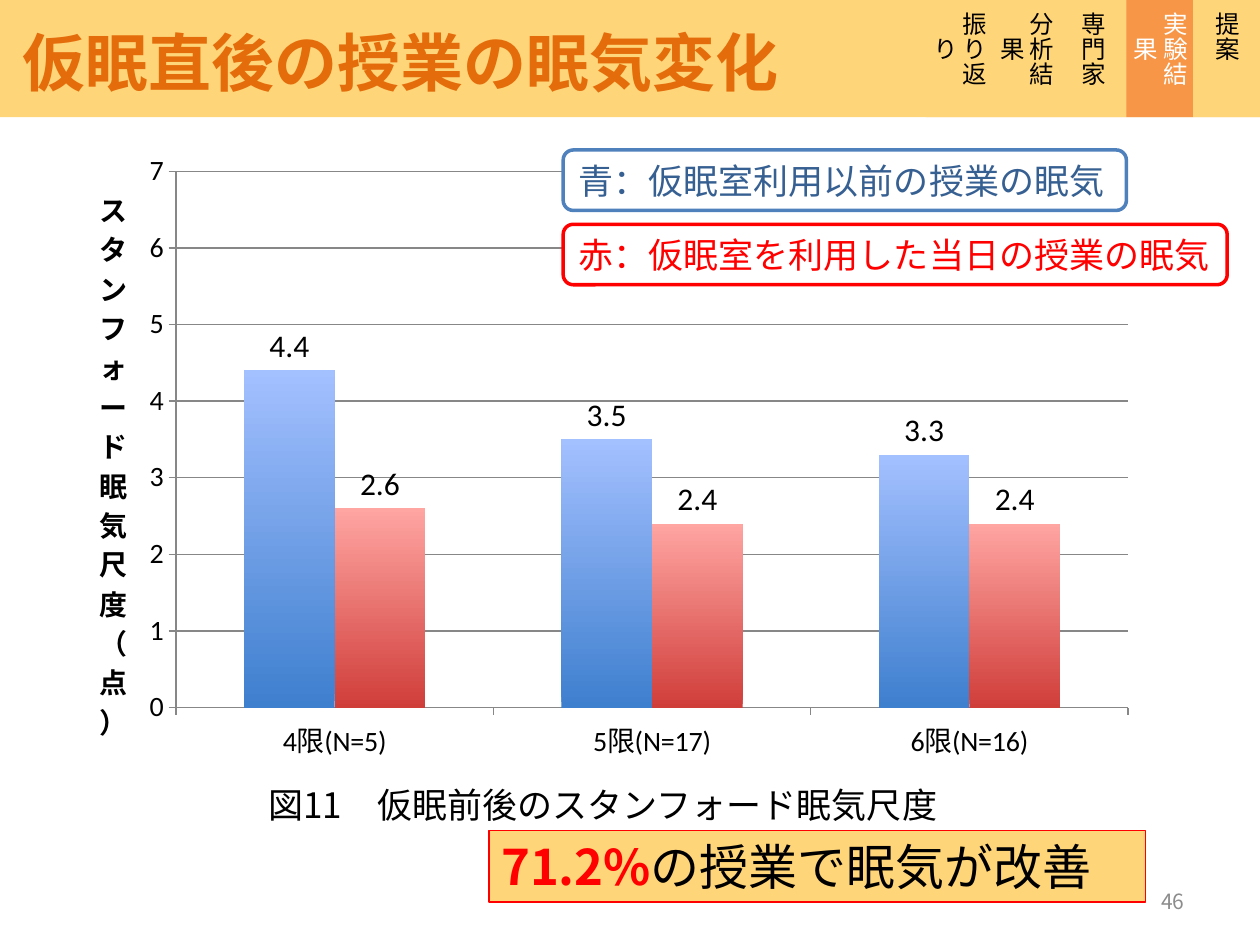
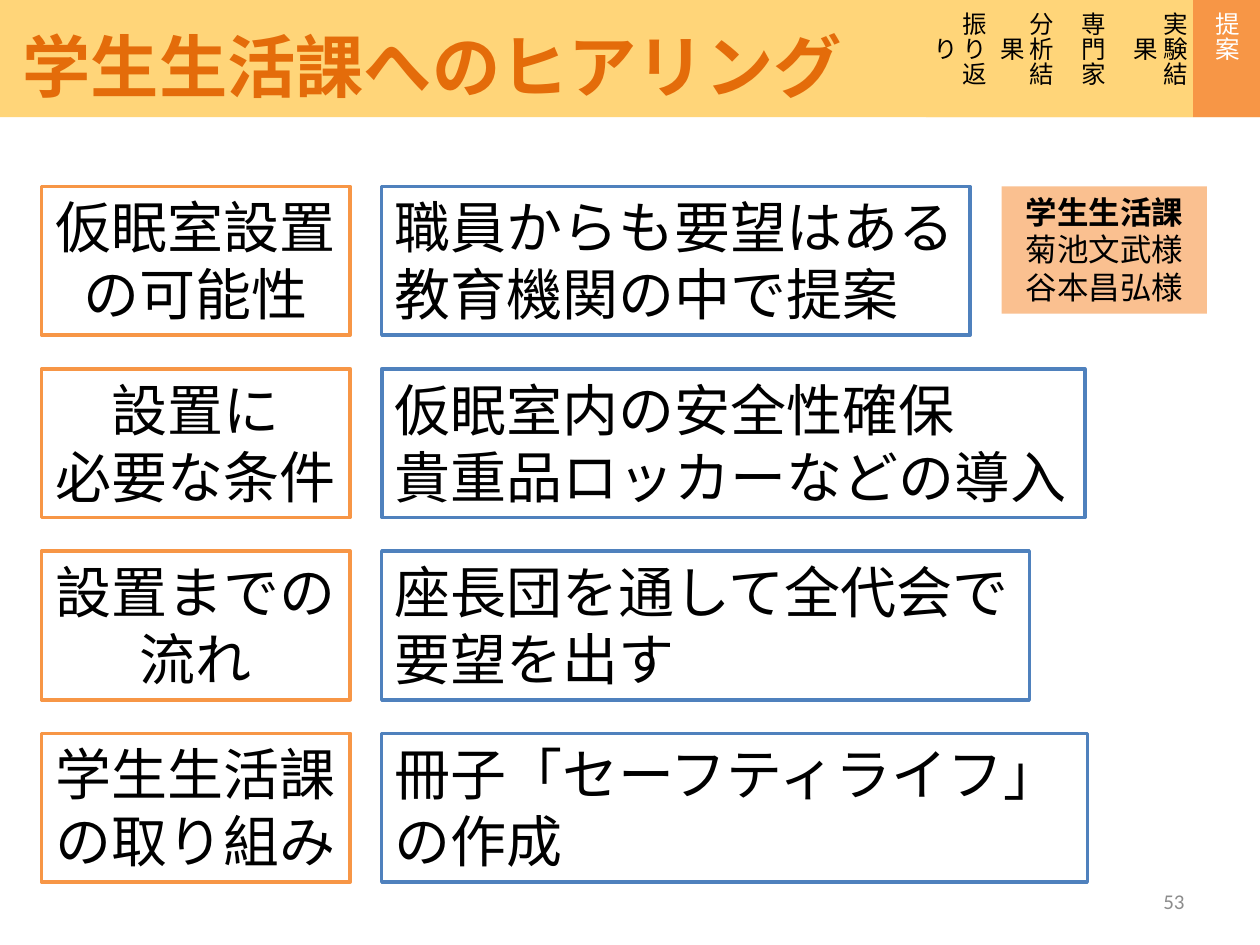
from dataclasses import dataclass
from typing import Sequence

from lxml import etree
from pptx import Presentation
from pptx.chart.data import CategoryChartData
from pptx.dml.color import RGBColor
from pptx.enum.chart import XL_CHART_TYPE, XL_LABEL_POSITION, XL_TICK_MARK
from pptx.enum.shapes import MSO_SHAPE
from pptx.enum.text import MSO_ANCHOR, MSO_AUTO_SIZE, PP_ALIGN
from pptx.oxml.ns import qn
from pptx.util import Inches, Pt

RECT, ROUNDED = MSO_SHAPE.RECTANGLE, MSO_SHAPE.ROUNDED_RECTANGLE
LEFT, CENTER, RIGHT = PP_ALIGN.LEFT, PP_ALIGN.CENTER, PP_ALIGN.RIGHT
TOP, MIDDLE = MSO_ANCHOR.TOP, MSO_ANCHOR.MIDDLE
NO_AUTOFIT = MSO_AUTO_SIZE.NONE
CLUSTERED = XL_CHART_TYPE.COLUMN_CLUSTERED
OUTSIDE_END = XL_LABEL_POSITION.OUTSIDE_END
TICK_OUT, TICK_NONE = XL_TICK_MARK.OUTSIDE, XL_TICK_MARK.NONE

JAPANESE, LATIN = "Noto Sans CJK JP", "Calibri"
BLACK = RGBColor(0x00, 0x00, 0x00)
WHITE = RGBColor(0xFF, 0xFF, 0xFF)
GREY = RGBColor(0x8C, 0x8C, 0x8C)
AXIS_GREY = RGBColor(0x87, 0x87, 0x87)
BAND = RGBColor(0xFF, 0xD5, 0x79)
TITLE_ORANGE = RGBColor(0xE4, 0x6C, 0x0A)
ORANGE = RGBColor(0xF7, 0x96, 0x46)
PEACH = RGBColor(0xFA, 0xC0, 0x90)
RED = RGBColor(0xFF, 0x00, 0x00)
BLUE = RGBColor(0x4F, 0x81, 0xBD)
DARK_BLUE = RGBColor(0x37, 0x60, 0x92)
BAR_BLUE = (RGBColor(0x3E, 0x7F, 0xCE), RGBColor(0xA3, 0xC0, 0xFF))
BAR_RED = (RGBColor(0xD0, 0x3E, 0x3A), RGBColor(0xFF, 0xA5, 0xA2))

BAND_HEIGHT = 0.93
TAB_WIDTH = 0.53
CHAPTERS = ("振り返り", "分析結果", "専門家", "実験結果", "提案")
TIGHT = 1.2


@dataclass(frozen=True)
class Place:
    left: float
    top: float
    width: float
    height: float

    def lengths(self):
        return tuple(Inches(v) for v in (self.left, self.top, self.width, self.height))


@dataclass(frozen=True)
class Span:
    text: str
    color: RGBColor = BLACK
    bold: bool = False


@dataclass(frozen=True)
class Legend:
    text: str
    top: float
    width: float
    color: RGBColor
    line: RGBColor


@dataclass(frozen=True)
class Hearing:
    topic: tuple[str, str]
    answer: tuple[str, str]
    answer_width: float


LEGENDS = (
    Legend("青：仮眠室利用以前の授業の眠気", 1.19, 4.47, DARK_BLUE, BLUE),
    Legend("赤：仮眠室を利用した当日の授業の眠気", 1.78, 5.27, RED, RED),
)
HEARINGS = (
    Hearing(("仮眠室設置", "の可能性"), ("職員からも要望はある", "教育機関の中で提案"), 4.67),
    Hearing(("設置に", "必要な条件"), ("仮眠室内の安全性確保", "貴重品ロッカーなどの導入"), 5.58),
    Hearing(("設置までの", "流れ"), ("座長団を通して全代会で", "要望を出す"), 5.14),
    Hearing(("学生生活課", "の取り組み"), ("冊子「セーフティライフ」", "の作成"), 5.6),
)


def write(shape, paragraphs: Sequence[Sequence[Span]], *, size: float, align=LEFT,
          anchor=TOP, wrap: bool = True, font: str = JAPANESE,
          spacing: float | None = None) -> None:
    """Fill a shape with text; spacing is the line height as a multiple of size."""
    frame = shape.text_frame
    frame.auto_size = NO_AUTOFIT
    frame.word_wrap = wrap
    frame.vertical_anchor = anchor
    for index, spans in enumerate(paragraphs):
        paragraph = frame.add_paragraph() if index else frame.paragraphs[0]
        paragraph.alignment = align
        if spacing:
            paragraph.line_spacing = Pt(size * spacing)
        for span in spans:
            run = paragraph.add_run()
            run.text = span.text
            run.font.size = Pt(size)
            run.font.bold = span.bold
            run.font.color.rgb = span.color
            run.font.name = font
    set_east_asian_font(shape.element)


def set_east_asian_font(element) -> None:
    for properties in element.iter(qn("a:rPr")):
        etree.SubElement(properties, qn("a:ea")).set("typeface", JAPANESE)


def add_box(slide, place: Place, fill: RGBColor, *, line: RGBColor | None = None,
            weight: float = 2, kind=RECT):
    box = slide.shapes.add_shape(kind, *place.lengths())
    box.shadow.inherit = False
    box.fill.solid()
    box.fill.fore_color.rgb = fill
    if line is None:
        box.line.fill.background()
    else:
        box.line.color.rgb = line
        box.line.width = Pt(weight)
    return box


def set_opacity(box, percent: int) -> None:
    color = box.element.spPr.find(qn("a:solidFill")).find(qn("a:srgbClr"))
    etree.SubElement(color, qn("a:alpha")).set("val", str(percent * 1000))


def add_page(deck, title: str, title_size: float, title_place: Place,
             chapter: str, number: str, number_font: str):
    """Add a slide with its band, title, chapter tabs and page number."""
    slide = deck.slides.add_slide(deck.slide_layouts[5])
    heading = slide.shapes.title
    heading.left, heading.top, heading.width, heading.height = title_place.lengths()
    write(heading, [[Span(title, TITLE_ORANGE, True)]], size=title_size,
          anchor=MIDDLE, wrap=False)
    band = add_box(slide, Place(0, 0, 10, BAND_HEIGHT), BAND)
    heading.element.addprevious(band.element)

    first_tab = 10 - TAB_WIDTH * len(CHAPTERS)
    for index, name in enumerate(CHAPTERS):
        active = name == chapter
        place = Place(first_tab + index * TAB_WIDTH, 0, TAB_WIDTH, BAND_HEIGHT)
        tab = add_box(slide, place, ORANGE if active else BAND)
        write(tab, [[Span(name, WHITE if active else BLACK)]], size=14,
              align=CENTER, anchor=MIDDLE, spacing=TIGHT)
        tab.element.txBody.bodyPr.set("vert", "eaVert")

    page_number = slide.shapes.add_textbox(*Place(7.17, 6.95, 2.33, 0.4).lengths())
    write(page_number, [[Span(number, GREY)]], size=12, align=RIGHT,
          anchor=MIDDLE, font=number_font)
    return slide


def set_layout(parent, **values: float | str) -> None:
    """Give a chart part a manual layout, values in schema order."""
    layout = parent.find(qn("c:layout"))
    if layout is None:
        layout = etree.Element(qn("c:layout"))
        parent.insert(0, layout)
    manual = etree.SubElement(layout, qn("c:manualLayout"))
    for name, value in values.items():
        etree.SubElement(manual, qn(f"c:{name}")).set("val", str(value))


def style_axis(axis) -> None:
    axis.major_tick_mark = TICK_OUT
    axis.minor_tick_mark = TICK_NONE
    axis.tick_labels.font.size = Pt(16)
    axis.format.line.color.rgb = AXIS_GREY


def add_sleepiness_chart(slide) -> None:
    data = CategoryChartData()
    data.categories = ["4限(N=5)", "5限(N=17)", "6限(N=16)"]
    data.add_series("Series 1", (4.4, 3.5, 3.3))
    data.add_series("Series 2", (2.6, 2.4, 2.4))
    place = Place(0.58, 1.19, 8.51, 4.99)
    chart = slide.shapes.add_chart(CLUSTERED, *place.lengths(), data).chart
    chart.has_legend = False
    chart.has_title = False
    chart.font.name = LATIN
    chart.font.size = Pt(10)
    chart.font.color.rgb = BLACK
    set_layout(chart.element.find(".//" + qn("c:plotArea")), layoutTarget="inner",
               xMode="edge", yMode="edge", x=0.096, y=0.034, w=0.888, h=0.853)

    plot = chart.plots[0]
    plot.gap_width = 150
    plot.overlap = 0
    plot.vary_by_categories = False
    for series, shades in zip(plot.series, (BAR_BLUE, BAR_RED)):
        fill = series.format.fill
        fill.gradient()
        fill.gradient_angle = 90
        for stop, shade in zip(fill.gradient_stops, shades):
            stop.color.rgb = shade
        labels = series.data_labels
        labels.show_value = True
        labels.position = OUTSIDE_END
        labels.font.size = Pt(18)

    style_axis(chart.category_axis)
    scale = chart.value_axis
    style_axis(scale)
    scale.minimum_scale, scale.maximum_scale, scale.major_unit = 0, 7, 1
    scale.major_gridlines.format.line.color.rgb = AXIS_GREY
    scale_title = scale.axis_title
    run = scale_title.text_frame.paragraphs[0].add_run()
    run.text = "スタンフォード眠気尺度（点）"
    run.font.size = Pt(16)
    run.font.bold = True
    run.font.name = LATIN
    set_east_asian_font(scale_title.element)
    direction = scale_title.element.find(".//" + qn("a:bodyPr"))
    direction.set("rot", "0")
    direction.set("vert", "wordArtVert")
    set_layout(scale_title.element, xMode="edge", yMode="edge", x=0.02, y=0.05)


def build_sleepiness_slide(deck) -> None:
    slide = add_page(deck, "仮眠直後の授業の眠気変化", 36, Place(0.08, 0.13, 6.26, 0.71),
                     "実験結果", "46", JAPANESE)
    caption = slide.shapes.add_textbox(*Place(2.03, 6.17, 5.6, 0.44).lengths())
    write(caption, [[Span("図11　仮眠前後のスタンフォード眠気尺度")]], size=20, spacing=TIGHT)
    add_sleepiness_chart(slide)
    finding = add_box(slide, Place(3.88, 6.59, 5.21, 0.57), BAND, line=RED, weight=0.75)
    write(finding, [[Span("71.2%", RED, True), Span("の授業で眠気が改善")]],
          size=28, anchor=MIDDLE)
    for legend in LEGENDS:
        key = add_box(slide, Place(4.47, legend.top, legend.width, 0.48), WHITE,
                      line=legend.line, kind=ROUNDED)
        write(key, [[Span(legend.text, legend.color)]], size=20, anchor=MIDDLE)


def build_hearing_slide(deck) -> None:
    slide = add_page(deck, "学生生活課へのヒアリング", 39, Place(0.08, 0.13, 6.93, 0.77),
                     "提案", "53", LATIN)
    interviewees = add_box(slide, Place(7.95, 1.48, 1.63, 1.01), PEACH)
    write(interviewees, [[Span("学生生活課", bold=True)], [Span("菊池文武様")],
                         [Span("谷本昌弘様")]], size=18, align=CENTER, spacing=TIGHT)
    for row, hearing in enumerate(HEARINGS):
        top = 1.48 + row * 1.447
        topic = add_box(slide, Place(0.33, top, 2.45, 1.18), WHITE, line=ORANGE)
        set_opacity(topic, 92)
        write(topic, [[Span(text)] for text in hearing.topic], size=32,
              align=CENTER, wrap=False, spacing=TIGHT)
        answer = add_box(slide, Place(3.03, top, hearing.answer_width, 1.18), WHITE,
                         line=BLUE)
        write(answer, [[Span(text)] for text in hearing.answer], size=32, spacing=TIGHT)


def main() -> None:
    deck = Presentation()
    deck.slide_width, deck.slide_height = Inches(10), Inches(7.5)
    build_sleepiness_slide(deck)
    build_hearing_slide(deck)
    deck.save("out.pptx")


if __name__ == "__main__":
    main()
